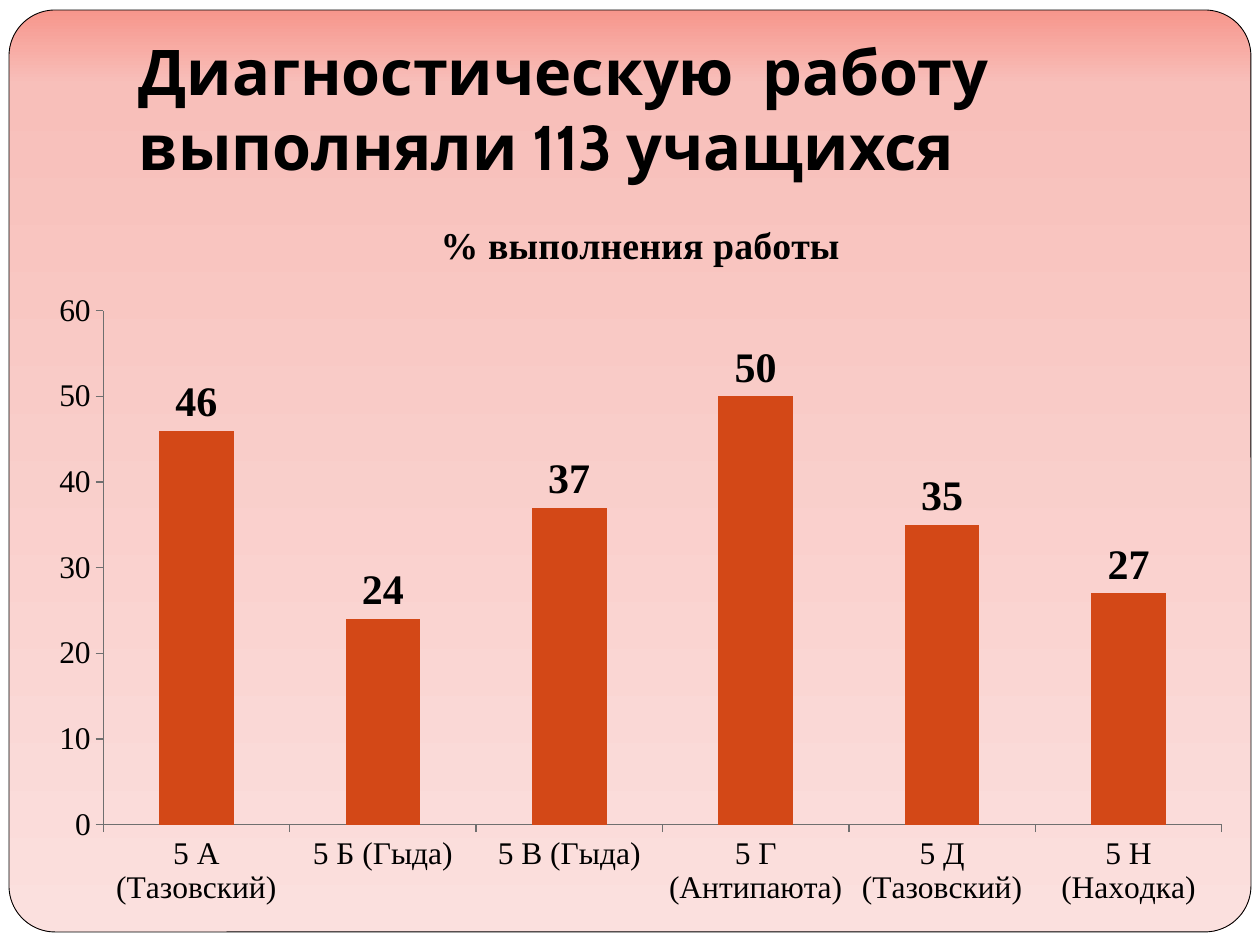
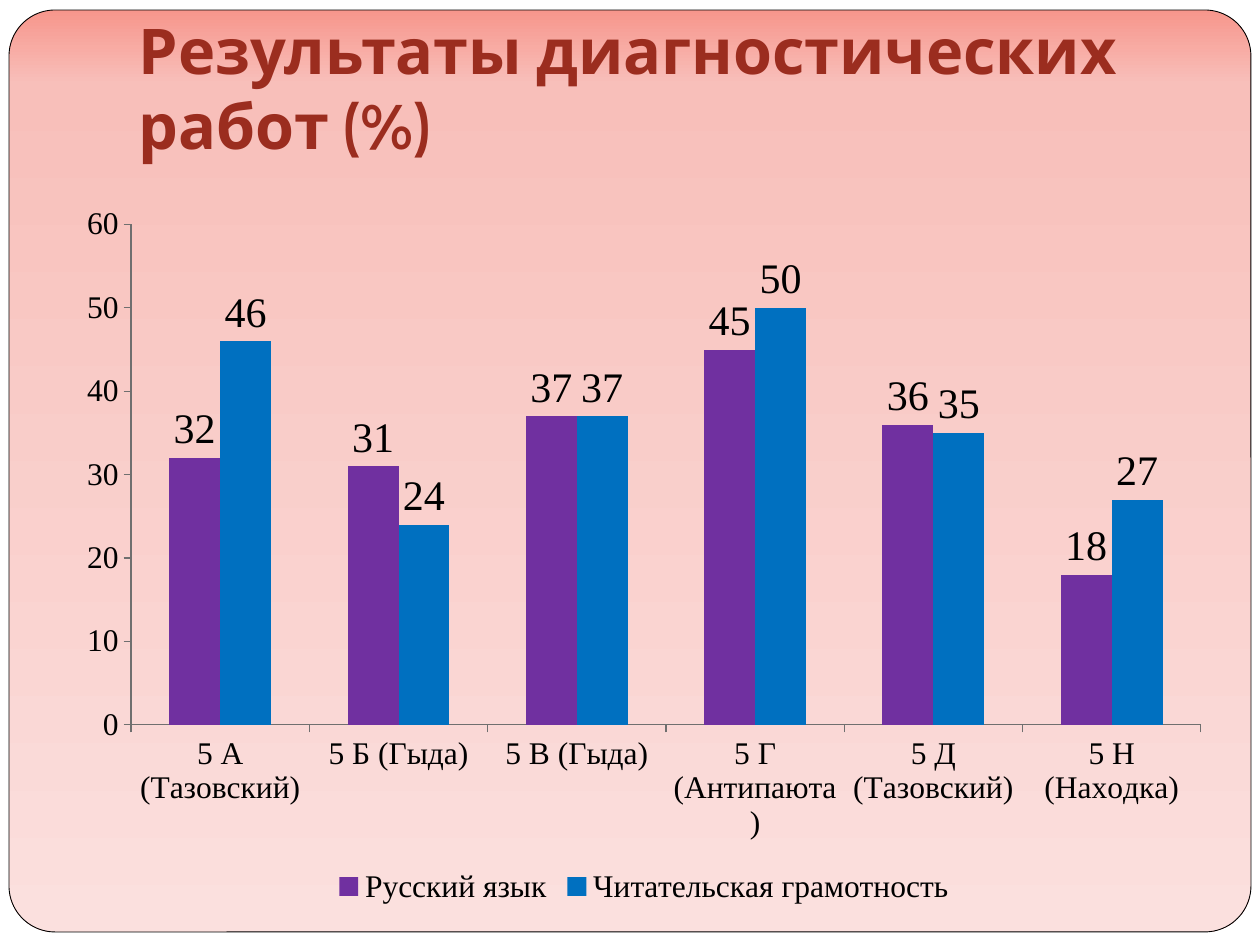
from lxml.etree import SubElement
from pptx import Presentation
from pptx.chart.data import CategoryChartData
from pptx.dml.color import RGBColor
from pptx.enum.chart import XL_CHART_TYPE, XL_LABEL_POSITION, XL_LEGEND_POSITION, XL_TICK_MARK
from pptx.enum.shapes import MSO_SHAPE
from pptx.enum.text import MSO_ANCHOR, MSO_AUTO_SIZE, PP_ALIGN
from pptx.oxml.ns import qn
from pptx.util import Pt

PX = 914400 / 126
HUES = {
    "white": "FFFFFF", "black": "000000", "rust": "9B2D1F", "axis": "6F6F6F",
    "orange": "D34817", "violet": "7030A0", "blue": "0070C0",
    "top": "F7968C", "band": "F8BFBA", "foot": "FBE0DE",
}
FADE = [(0, "top"), (8, "band"), (100, "foot")]
CLASSES = ["5 А (Тазовский)", "5 Б (Гыда)", "5 В (Гыда)",
           "5 Г (Антипаюта)", "5 Д (Тазовский)", "5 Н (Находка)"]
READING = [46, 24, 37, 50, 35, 27]
RUSSIAN = [32, 31, 37, 45, 36, 18]
SLIDES = [
    {"title": "Диагностическую  работу  выполняли 113 учащихся", "hue": "black",
     "box": (126, 38, 1071, 158), "plot": (35, 193, 1211, 727), "bold": True,
     "series": [("% выполнения работы", READING, "orange")]},
    {"title": "Результаты диагностических работ (%)", "hue": "rust",
     "box": (126, 38, 1119, 137), "plot": (64, 193, 1160, 717), "bold": False,
     "series": [("Русский язык", RUSSIAN, "violet"),
                ("Читательская грамотность", READING, "blue")]},
]


def emu(*sizes):
    return [round(size * PX) for size in sizes]


def style(font, size, bold, name="Times New Roman", hue="black"):
    font.size, font.bold, font.name = Pt(size), bold, name
    font.color.rgb = RGBColor.from_string(HUES[hue])


deck = Presentation()
deck.slide_width, deck.slide_height = emu(1260, 945)
layout = deck.slide_layouts[5]
pages = [deck.slides.add_slide(layout) for _ in SLIDES]

# Shared backdrop: white sheet and rounded card, moved to the layout
shapes = pages[0].shapes
sheet = shapes.add_shape(MSO_SHAPE.RECTANGLE, *emu(0, 0, 1260, 945))
sheet.fill.solid()
sheet.fill.fore_color.rgb = RGBColor.from_string(HUES["white"])
sheet.line.fill.background()

card = shapes.add_shape(MSO_SHAPE.ROUNDED_RECTANGLE, *emu(9, 10, 1242, 922))
card.adjustments[0] = 0.05
card.fill.gradient()
card.fill.gradient_angle = 270
stops = card._element.spPr.find(qn("a:gradFill")).find(qn("a:gsLst"))
for stop in list(stops):
    stops.remove(stop)
for place, hue in FADE:
    stop = SubElement(stops, qn("a:gs"), pos=str(place * 1000))
    SubElement(stop, qn("a:srgbClr"), val=HUES[hue])
card.line.color.rgb = RGBColor.from_string(HUES["black"])
card.line.width = Pt(0.5)

for order, part in enumerate((sheet, card)):
    part.shadow.inherit = False
    part._element.nvSpPr.cNvPr.set("id", str(101 + order))
    layout.shapes._spTree.insert(2 + order, part._element)

for page, data in zip(pages, SLIDES):
    title = page.shapes.title
    title.left, title.top, title.width, title.height = emu(*data["box"])
    frame = title.text_frame
    frame.text = data["title"]
    frame.word_wrap = True
    frame.auto_size = MSO_AUTO_SIZE.NONE
    frame.vertical_anchor = MSO_ANCHOR.BOTTOM
    frame.margin_left = frame.margin_right = frame.margin_bottom = Pt(7.2)
    frame.margin_top = Pt(3.6)
    frame.paragraphs[0].alignment = PP_ALIGN.LEFT
    style(frame.paragraphs[0].runs[0].font, 36, True, "Cabin", data["hue"])

    table = CategoryChartData()
    table.categories = CLASSES
    for name, values, hue in data["series"]:
        table.add_series(name, values)
    chart = page.shapes.add_chart(
        XL_CHART_TYPE.COLUMN_CLUSTERED, *emu(*data["plot"]), table).chart
    style(chart.font, 18, False)

    single = len(data["series"]) == 1
    chart.has_title = single
    chart.has_legend = not single
    if single:
        head = chart.chart_title.text_frame
        head.text = data["series"][0][0]
        style(head.paragraphs[0].runs[0].font, 21.6, True)
        chart.chart_title.include_in_layout = False
    else:
        chart.legend.position = XL_LEGEND_POSITION.BOTTOM
        chart.legend.include_in_layout = False

    for axis in (chart.category_axis, chart.value_axis):
        axis.has_major_gridlines = False
        axis.major_tick_mark = XL_TICK_MARK.OUTSIDE
        axis.minor_tick_mark = XL_TICK_MARK.NONE
        axis.format.line.color.rgb = RGBColor.from_string(HUES["axis"])
    scale = chart.value_axis
    scale.minimum_scale, scale.maximum_scale, scale.major_unit = 0, 60, 10

    plot = chart.plots[0]
    plot.gap_width, plot.overlap = 150, 0
    plot.vary_by_categories = False
    for series, (name, values, hue) in zip(plot.series, data["series"]):
        series.format.fill.solid()
        series.format.fill.fore_color.rgb = RGBColor.from_string(HUES[hue])
        labels = series.data_labels
        labels.show_value = True
        labels.position = XL_LABEL_POSITION.OUTSIDE_END
        style(labels.font, 24, data["bold"])

deck.save("out.pptx")
